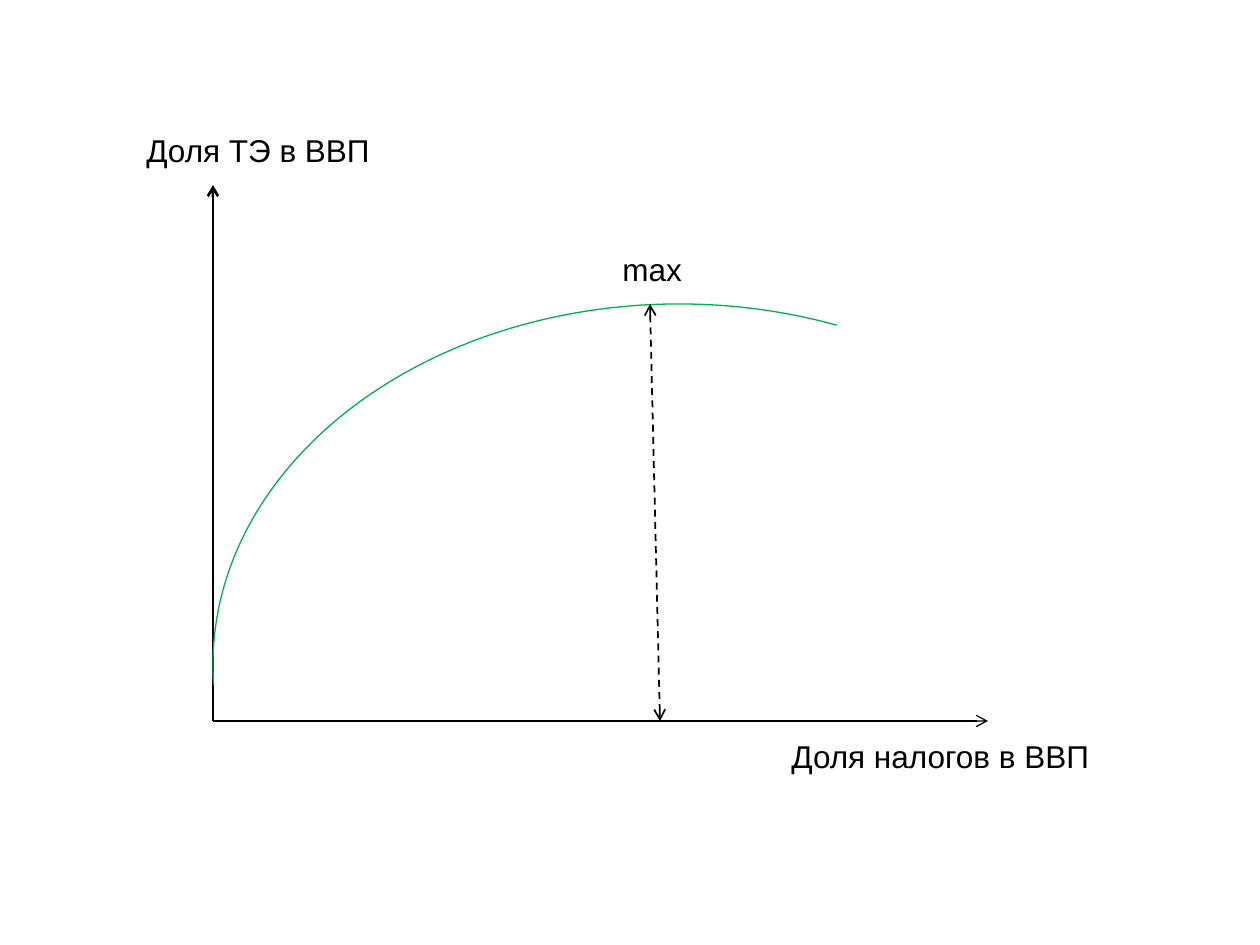
import pptx
import pptx.dml.color
import pptx.enum.dml
import pptx.enum.shapes
import pptx.enum.text
import pptx.oxml.ns
import pptx.util
from lxml import etree

BLACK = pptx.dml.color.RGBColor(0x00, 0x00, 0x00)
GREEN = pptx.dml.color.RGBColor(0x00, 0xB0, 0x50)

EMU_PER_PX = 914400 / 126


def px(length):
    return pptx.util.Emu(round(length * EMU_PER_PX))


class Diagram:
    font_name = "Arial"
    font_size = 18

    def __init__(self, slide):
        self.slide = slide

    def style_line(self, line, color, width):
        line.color.rgb = color
        line.width = pptx.util.Pt(width)

    def arrow(self, start, end, width, dashed=False, both_ends=False):
        connector = self.slide.shapes.add_connector(
            pptx.enum.shapes.MSO_CONNECTOR.STRAIGHT,
            *map(px, start + end))
        self.style_line(connector.line, BLACK, width)
        if dashed:
            connector.line.dash_style = pptx.enum.dml.MSO_LINE.DASH
        properties = connector.element.spPr
        outline = properties.find(pptx.oxml.ns.qn("a:ln"))
        for tag in ("a:headEnd", "a:tailEnd") if both_ends else ("a:tailEnd",):
            etree.SubElement(outline, pptx.oxml.ns.qn(tag), type="arrow")
        etree.SubElement(properties, pptx.oxml.ns.qn("a:effectLst"))

    def mirrored_arc(self, left, top, width, height, adjustments):
        shape = self.slide.shapes.add_shape(
            pptx.enum.shapes.MSO_SHAPE.ARC,
            px(left), px(top), px(width), px(height))
        for index, value in enumerate(adjustments):
            shape.adjustments[index] = value
        shape.element.spPr.xfrm.set("flipH", "1")
        shape.shadow.inherit = False
        shape.fill.background()
        self.style_line(shape.line, GREEN, 0.75)

    def label(self, text, left, top, width, height=50):
        box = self.slide.shapes.add_textbox(px(left), px(top), px(width), px(height))
        frame = box.text_frame
        frame.word_wrap = False
        frame.auto_size = pptx.enum.text.MSO_AUTO_SIZE.SHAPE_TO_FIT_TEXT
        paragraph = frame.paragraphs[0]
        paragraph.text = text
        paragraph.font.name = self.font_name
        paragraph.font.size = pptx.util.Pt(self.font_size)
        paragraph.font.color.rgb = BLACK


def main():
    presentation = pptx.Presentation()
    presentation.slide_width = px(1260)
    presentation.slide_height = px(945)
    blank_layout = presentation.slide_layouts[6]
    diagram = Diagram(presentation.slides.add_slide(blank_layout))

    origin = (213, 721)
    curve_top = 304

    # Axes
    diagram.arrow(origin, (213, 185), 1.5)
    diagram.arrow(origin, (988, 721), 0.75)

    # Curve and its maximum
    diagram.mirrored_arc(origin[0], curve_top, 932, 721, (147.03, 1.53))
    diagram.arrow((650, curve_top), (660, origin[1]), 1, dashed=True, both_ends=True)

    # Labels
    diagram.label("max", 610, 244, 86)
    diagram.label("Доля налогов в ВВП", 779, 731, 326)
    diagram.label("Доля ТЭ в ВВП", 134, 125, 252)

    presentation.save("out.pptx")


if __name__ == "__main__":
    main()
